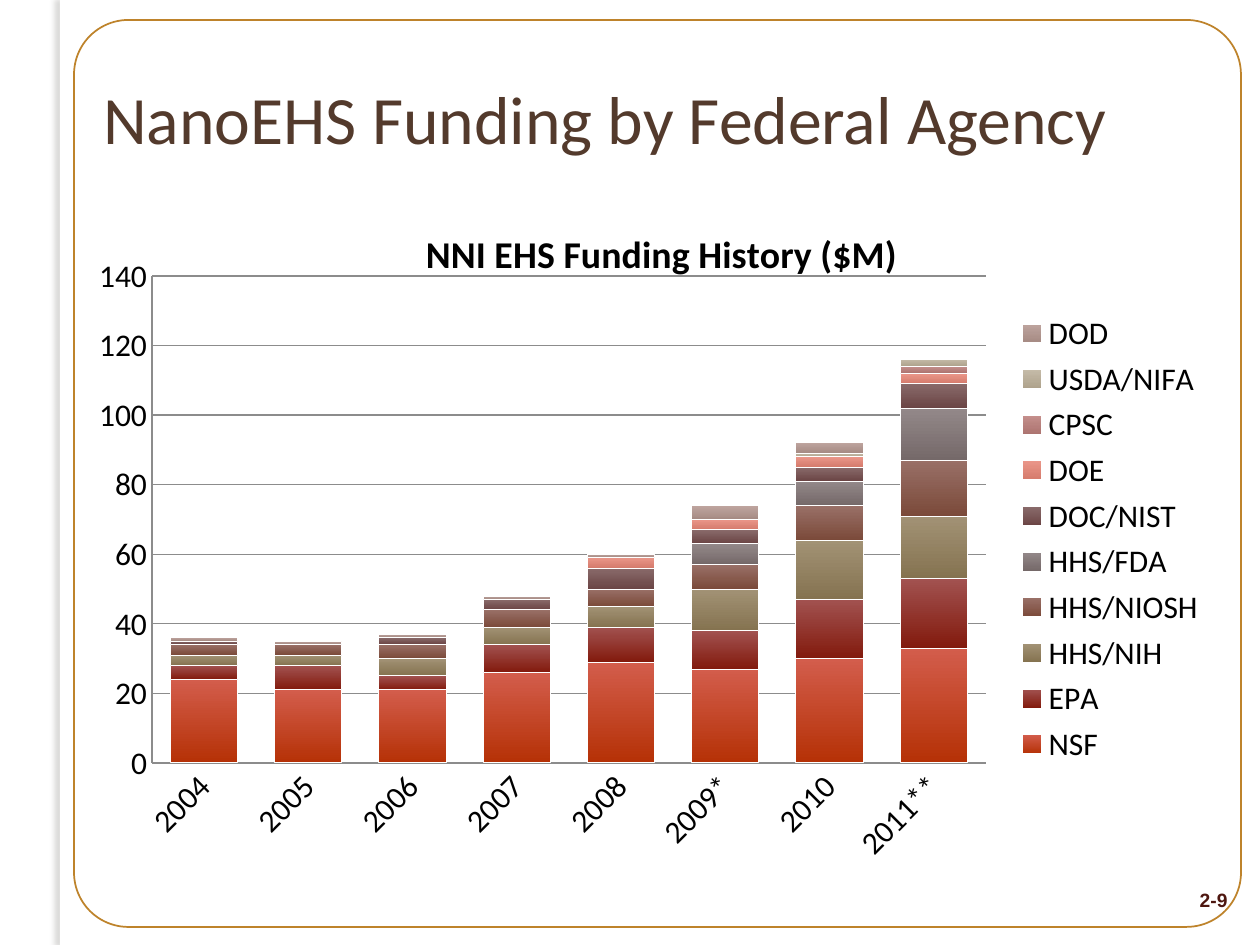
from dataclasses import dataclass

from lxml import etree
from pptx import Presentation
from pptx.chart.data import CategoryChartData
from pptx.dml.color import RGBColor
from pptx.enum.chart import XL_CHART_TYPE, XL_LEGEND_POSITION, XL_TICK_MARK
from pptx.enum.shapes import MSO_SHAPE
from pptx.enum.text import MSO_ANCHOR, PP_ALIGN
from pptx.oxml import parse_xml
from pptx.oxml.ns import nsdecls, qn
from pptx.util import Emu, Pt

STACKED = XL_CHART_TYPE.COLUMN_STACKED
LEGEND_RIGHT = XL_LEGEND_POSITION.RIGHT
NO_TICK = XL_TICK_MARK.NONE
RECTANGLE = MSO_SHAPE.RECTANGLE
ROUNDED = MSO_SHAPE.ROUNDED_RECTANGLE
MIDDLE, TOP = MSO_ANCHOR.MIDDLE, MSO_ANCHOR.TOP
LEFT, RIGHT = PP_ALIGN.LEFT, PP_ALIGN.RIGHT

EMU_PER_PX = 914400 / 126
CHART_AREA = (91, 199, 1140, 708)
COLORS = {
    "white": "FFFFFF", "black": "000000", "title": "533A2C", "number": "4E1710",
    "frame": "BE832B", "grid": "8C8C8C", "shadow": "74726D",
}
YEARS = ["2004", "2005", "2006", "2007", "2008", "2009*", "2010", "2011**"]


@dataclass(frozen=True)
class Agency:
    name: str
    funding: tuple
    top: str
    bottom: str


@dataclass(frozen=True)
class Label:
    text: str
    area: tuple
    font: str
    size: float
    color: str
    bold: bool
    align: PP_ALIGN
    anchor: MSO_ANCHOR


AGENCIES = [
    Agency("NSF", (24, 21, 21, 26, 29, 27, 30, 33), "D35D4C", "B53106"),
    Agency("EPA", (4, 7, 4, 8, 10, 11, 17, 20), "A25250", "821A0D"),
    Agency("HHS/NIH", (3, 3, 5, 5, 6, 12, 17, 18), "A29275", "857350"),
    Agency("HHS/NIOSH", (3, 3, 4, 5, 5, 7, 10, 16), "997067", "7B4A3A"),
    Agency("HHS/FDA", (None,) * 5 + (6, 7, 15), "938889", "756969"),
    Agency("DOC/NIST", (1, 0, 2, 3, 6, 4, 4, 7), "896A6A", "6B4545"),
    Agency("DOE", (0, 0, 0, 0, 3, 3, 3, 3), "EA9689", "D57B6C"),
    Agency("CPSC", (None,) * 5 + (0, 0, 2), "C58F8C", "AC7470"),
    Agency("USDA/NIFA", (0, 0, 0, 0, 0, 0, 1, 2), "C5BBA8", "AEA28C"),
    Agency("DOD", (1, 1, 1, 1, 1, 4, 3, 0), "BEA49E", "A58A83"),
]
LABELS = [
    Label("2-9", (1152, 882, 88, 37), "Arial", 11, "number", True, RIGHT, TOP),
    Label("NanoEHS Funding by Federal Agency", (91, 38, 1140, 158), "Calibri", 38.7,
          "title", False, LEFT, MIDDLE),
]


def px(length: int) -> Emu:
    """Turn pixels into EMU."""
    return Emu(round(length * EMU_PER_PX))


def rgb(key: str) -> RGBColor:
    """Look up a named colour."""
    return RGBColor.from_string(COLORS[key])


def add_label(page, label: Label) -> None:
    """Add one line of text."""
    box = page.shapes.add_textbox(*map(px, label.area))
    frame = box.text_frame
    frame.word_wrap = True
    frame.vertical_anchor = label.anchor
    frame.text = label.text
    para = frame.paragraphs[0]
    para.alignment = label.align
    font = para.runs[0].font
    font.name, font.size, font.bold = label.font, Pt(label.size), label.bold
    font.color.rgb = rgb(label.color)


def add_backdrop(page) -> None:
    """Add the shadowed left strip and the rounded frame."""
    strip = page.shapes.add_shape(RECTANGLE, px(60), px(0), px(10), px(945))
    strip.fill.solid()
    strip.fill.fore_color.rgb = rgb("white")
    strip.line.fill.background()
    strip._element.spPr.append(parse_xml(
        f'<a:effectLst {nsdecls("a")}><a:outerShdw blurRad="{Pt(3)}" dist="{Pt(3)}" '
        f'dir="10800000"><a:srgbClr val="{COLORS["shadow"]}"><a:alpha val="25000"/>'
        '</a:srgbClr></a:outerShdw></a:effectLst>'))
    frame = page.shapes.add_shape(ROUNDED, px(74), px(20), px(1167), px(907))
    frame.adjustments[0] = 0.06
    frame.shadow.inherit = False
    frame.fill.background()
    frame.line.color.rgb = rgb("frame")
    frame.line.width = Pt(1)


def set_layout(element, index: int, inner: bool, **lengths: int) -> None:
    """Place a chart part by px within the chart area."""
    for old in element.findall(qn("c:layout")):
        element.remove(old)
    layout = etree.Element(qn("c:layout"))
    manual = etree.SubElement(layout, qn("c:manualLayout"))
    if inner:
        etree.SubElement(manual, qn("c:layoutTarget")).set("val", "inner")
    for side in ("x", "y"):
        etree.SubElement(manual, qn(f"c:{side}Mode")).set("val", "edge")
    width, height = CHART_AREA[2:]
    for side, length in lengths.items():
        whole = width if side in "xw" else height
        etree.SubElement(manual, qn(f"c:{side}")).set("val", f"{length / whole:.4f}")
    element.insert(index, layout)


def style_axes(chart) -> None:
    """Format both axes and the gridlines."""
    years, dollars = chart.category_axis, chart.value_axis
    dollars.minimum_scale, dollars.maximum_scale, dollars.major_unit = 0, 140, 20
    dollars.has_major_gridlines = True
    dollars.tick_labels.number_format = "0"
    dollars.tick_labels.number_format_is_linked = False
    for axis in (years, dollars):
        axis.major_tick_mark = axis.minor_tick_mark = NO_TICK
        axis.tick_labels.font.size = Pt(18)
    for line in (years.format.line, dollars.format.line, dollars.major_gridlines.format.line):
        line.color.rgb = rgb("grid")
        line.width = Pt(0.75)
    years._element.txPr.find(qn("a:bodyPr")).set("rot", "-2700000")


def add_funding_chart(page) -> None:
    """Add the stacked columns of funding by agency."""
    data = CategoryChartData()
    data.categories = YEARS
    for agency in AGENCIES:
        data.add_series(agency.name, agency.funding)
    chart = page.shapes.add_chart(STACKED, *map(px, CHART_AREA), data).chart
    chart.font.name, chart.font.size = "Calibri", Pt(18)
    chart.font.color.rgb = rgb("black")

    chart.has_title = True
    chart.chart_title.text_frame.text = "NNI EHS Funding History ($M)"
    font = chart.chart_title.text_frame.paragraphs[0].runs[0].font
    font.name, font.size, font.bold = "Calibri", Pt(21.6), True
    font.color.rgb = rgb("black")
    set_layout(chart.chart_title._element, 1, False, x=328, y=21)

    chart.has_legend = True
    chart.legend.position = LEGEND_RIGHT
    chart.legend.include_in_layout = False
    chart.legend.font.size = Pt(18)
    set_layout(chart.legend._element, 1, False, x=917, y=108, w=205, h=464)

    plot = chart.plots[0]
    plot.gap_width, plot.overlap, plot.vary_by_categories = 55, 100, False
    set_layout(plot._element.getparent(), 0, True, x=61, y=77, w=834, h=487)
    for series, agency in zip(plot.series, AGENCIES):
        fill = series.format.fill
        fill.gradient()
        fill.gradient_angle = 270
        for stop, color in zip(fill.gradient_stops, (agency.top, agency.bottom)):
            stop.color.rgb = RGBColor.from_string(color)
        series.format.line.color.rgb = rgb("white")
        series.format.line.width = Pt(0.5)
    style_axes(chart)


def main() -> None:
    """Build and save the deck."""
    deck = Presentation()
    deck.slide_width, deck.slide_height = px(1260), px(945)
    page = deck.slides.add_slide(deck.slide_layouts[6])
    add_backdrop(page)
    for label in LABELS:
        add_label(page, label)
    add_funding_chart(page)
    deck.save("out.pptx")


if __name__ == "__main__":
    main()
